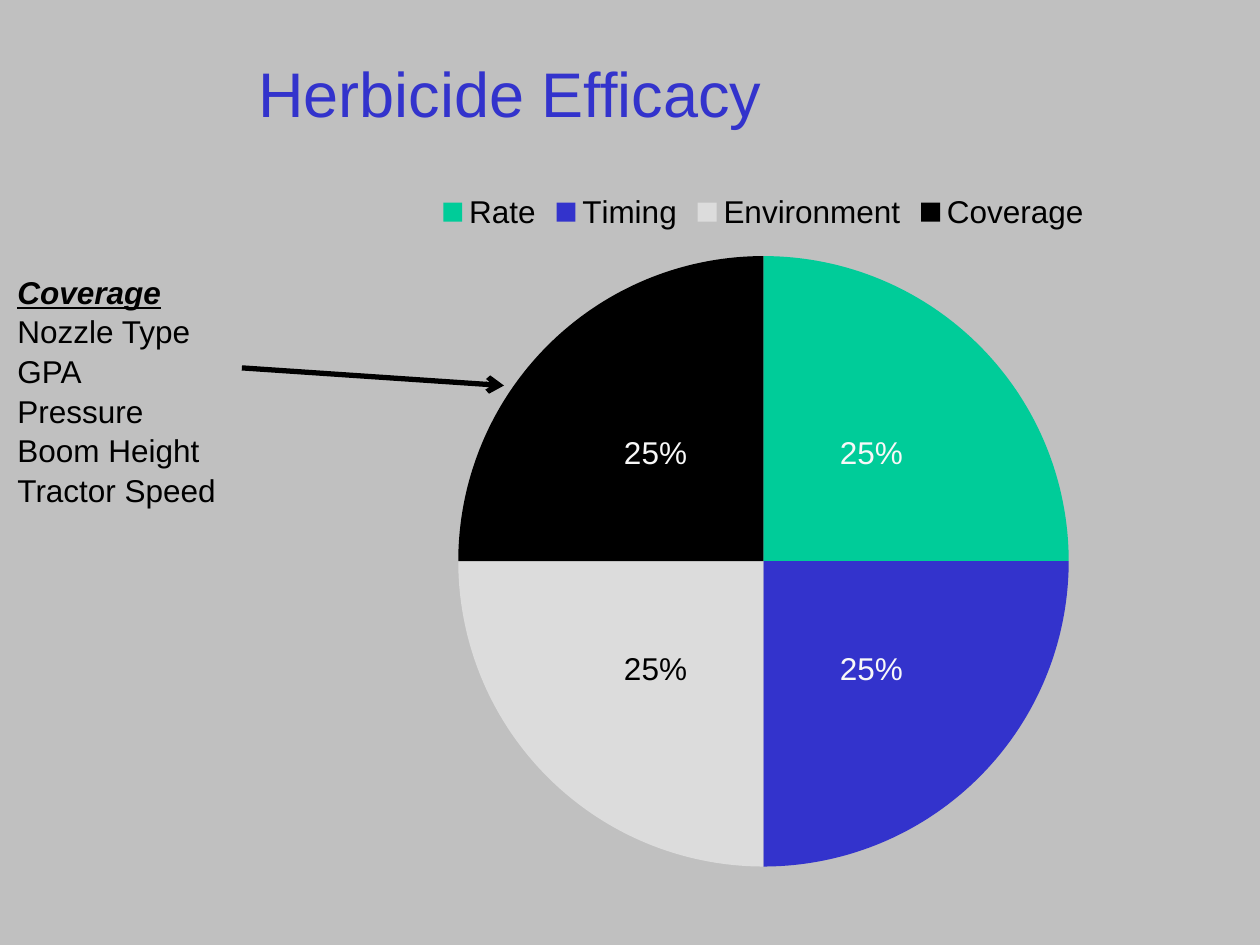
import pptx
import pptx.chart.data
import pptx.dml.color
import pptx.enum.chart
import pptx.enum.shapes
import pptx.enum.text
import pptx.oxml
import pptx.oxml.ns
import pptx.util

RGBColor = pptx.dml.color.RGBColor
GRAY = RGBColor(0xC0, 0xC0, 0xC0)
BLUE = RGBColor(0x33, 0x33, 0xCC)
GREEN = RGBColor(0x00, 0xCC, 0x99)
PALE = RGBColor(0xDC, 0xDC, 0xDC)
BLACK = RGBColor(0x00, 0x00, 0x00)
WHITE = RGBColor(0xF8, 0xF8, 0xF8)
FONT = "Arial"
WIDTH, HEIGHT = pptx.util.Inches(10), pptx.util.Inches(7.5)

FACTORS = {"Rate": GREEN, "Timing": BLUE, "Environment": PALE, "Coverage": BLACK}
COVERAGE_ITEMS = ["Nozzle Type", "GPA", "Pressure", "Boom Height", "Tractor Speed"]


def inches(*lengths):
    return [pptx.util.Inches(length) for length in lengths]


def style_font(font, size, color):
    font.name = FONT
    font.size = pptx.util.Pt(size)
    font.color.rgb = color


def add_title(slide, text):
    title = slide.shapes.title
    title.left, title.top, title.width, title.height = inches(1.95, 0.11, 7.97, 1.25)
    title.text_frame.vertical_anchor = pptx.enum.text.MSO_ANCHOR.MIDDLE
    paragraph = title.text_frame.paragraphs[0]
    paragraph.alignment = pptx.enum.text.PP_ALIGN.LEFT
    run = paragraph.add_run()
    run.text = text
    style_font(run.font, 36, BLUE)


def set_plot_layout(chart, x, y, width, height):
    """Fix the inner plot area, in shares of the chart's size."""
    plot_area = chart.plots[0]._element.getparent()
    for old_layout in plot_area.findall(pptx.oxml.ns.qn("c:layout")):
        plot_area.remove(old_layout)
    plot_area.insert(0, pptx.oxml.parse_xml(
        f'<c:layout {pptx.oxml.ns.nsdecls("c")}><c:manualLayout>'
        '<c:layoutTarget val="inner"/><c:xMode val="edge"/><c:yMode val="edge"/>'
        f'<c:x val="{x}"/><c:y val="{y}"/><c:w val="{width}"/><c:h val="{height}"/>'
        '</c:manualLayout></c:layout>'))


def add_pie(slide, factors):
    data = pptx.chart.data.CategoryChartData(number_format="0%")
    data.categories = list(factors)
    data.add_series("Series 1", [1 / len(factors)] * len(factors))
    chart = slide.shapes.add_chart(
        pptx.enum.chart.XL_CHART_TYPE.PIE, *inches(2.12, 1.42, 7.88, 5.57), data).chart
    chart.has_title = False
    style_font(chart.font, 18, BLACK)
    chart.has_legend = True
    chart.legend.position = pptx.enum.chart.XL_LEGEND_POSITION.TOP
    chart.legend.include_in_layout = False
    set_plot_layout(chart, 0.19, 0.11, 0.62, 0.87)

    # Slices
    plot = chart.plots[0]
    plot.vary_by_categories = True
    series = plot.series[0]
    for index, color in enumerate(factors.values()):
        fill = series.points[index].format.fill
        fill.solid()
        fill.fore_color.rgb = color

    # Value labels, dark on the pale slice
    labels = series.data_labels
    labels.show_value = True
    labels.show_percentage = False
    labels.number_format = "0%"
    labels.number_format_is_linked = False
    labels.position = pptx.enum.chart.XL_LABEL_POSITION.CENTER
    style_font(labels.font, 18, WHITE)
    pale_label = series.points[list(factors.values()).index(PALE)].data_label
    style_font(pale_label.font, 18, BLACK)
    pale_label.position = pptx.enum.chart.XL_LABEL_POSITION.CENTER


def add_list(slide, heading, items):
    text_frame = slide.shapes.add_textbox(*inches(0.04, 2.1, 1.79, 1.92)).text_frame
    text_frame.word_wrap = False
    text_frame.auto_size = pptx.enum.text.MSO_AUTO_SIZE.SHAPE_TO_FIT_TEXT
    for index, text in enumerate([heading, *items]):
        paragraph = text_frame.add_paragraph() if index else text_frame.paragraphs[0]
        paragraph.line_spacing = 1.05
        run = paragraph.add_run()
        run.text = text
        style_font(run.font, 18, BLACK)
        run.font.bold = run.font.italic = run.font.underline = index == 0


def add_arrow(slide, start, end):
    arrow = slide.shapes.add_connector(
        pptx.enum.shapes.MSO_CONNECTOR.STRAIGHT, *inches(*start, *end))
    arrow.line.color.rgb = BLACK
    arrow.line.width = pptx.util.Pt(3)
    namespace = pptx.oxml.ns.nsdecls("a")
    arrow.line._get_or_add_ln().append(
        pptx.oxml.parse_xml(f'<a:tailEnd {namespace} type="arrow"/>'))
    arrow._element.spPr.append(pptx.oxml.parse_xml(f"<a:effectLst {namespace}/>"))


def main():
    presentation = pptx.Presentation()
    presentation.slide_width, presentation.slide_height = WIDTH, HEIGHT
    slide = presentation.slides.add_slide(
        presentation.slide_layouts.get_by_name("Title Only"))
    slide.background.fill.solid()
    slide.background.fill.fore_color.rgb = GRAY

    add_title(slide, "Herbicide Efficacy")
    add_pie(slide, FACTORS)
    add_list(slide, "Coverage", COVERAGE_ITEMS)
    add_arrow(slide, (1.92, 2.92), (4, 3.06))
    presentation.save("out.pptx")


if __name__ == "__main__":
    main()
